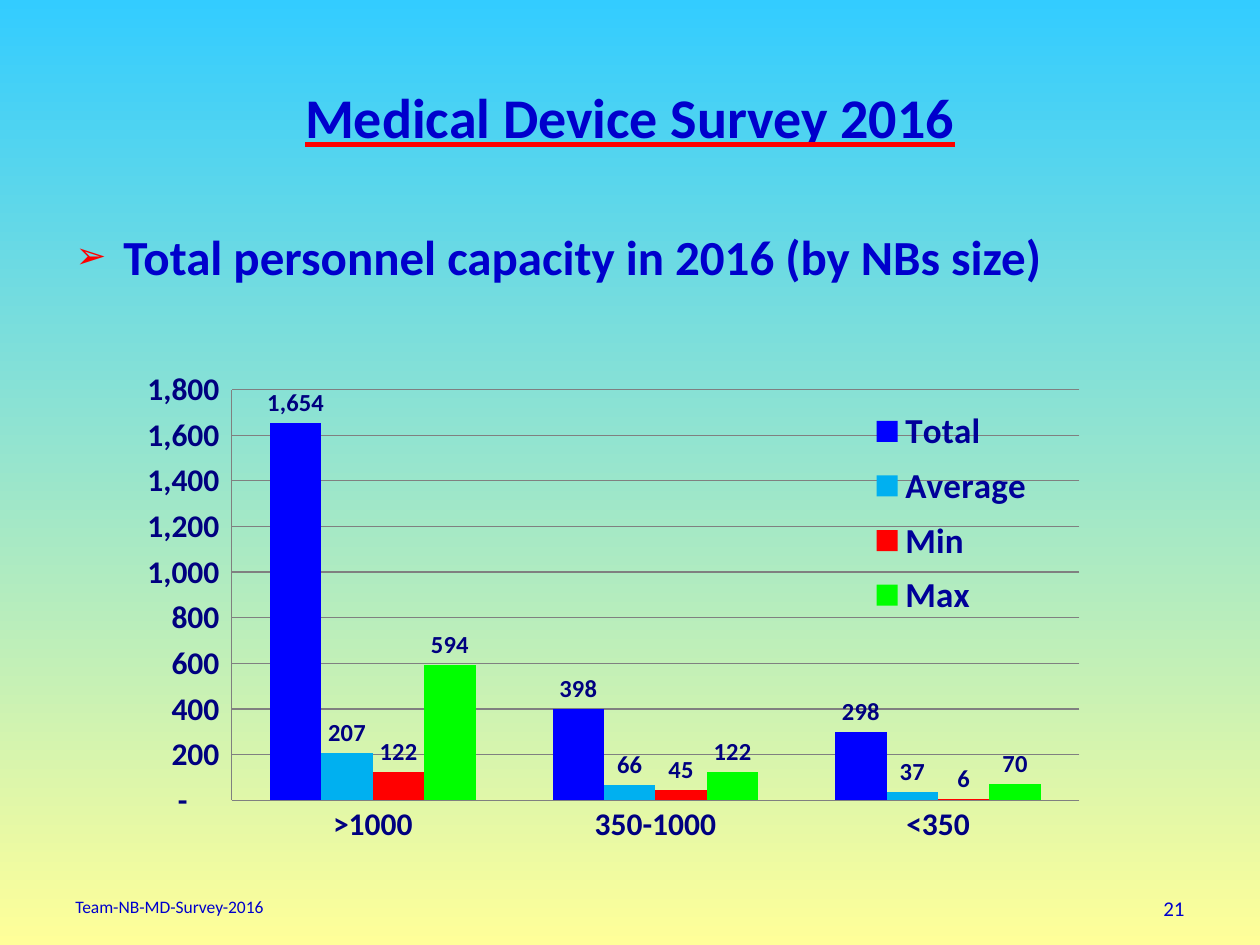
from dataclasses import dataclass

from lxml import etree
from pptx import Presentation
from pptx.chart.data import CategoryChartData
from pptx.dml.color import RGBColor
from pptx.enum.chart import XL_CHART_TYPE as ChartType
from pptx.enum.chart import XL_LABEL_POSITION as LabelPosition
from pptx.enum.chart import XL_LEGEND_POSITION as LegendPosition
from pptx.enum.chart import XL_TICK_MARK as TickMark
from pptx.enum.text import MSO_ANCHOR as Anchor
from pptx.enum.text import PP_ALIGN as Align
from pptx.oxml import parse_xml
from pptx.oxml.ns import nsdecls, qn
from pptx.util import Inches, Pt

SKY = RGBColor(0x33, 0xCC, 0xFF)
CREAM = RGBColor(0xFF, 0xFF, 0x99)
BLUE = RGBColor(0x00, 0x00, 0xCC)
NAVY = RGBColor(0x00, 0x00, 0x80)
LEGEND_BLUE = RGBColor(0x00, 0x00, 0x99)
RED = RGBColor(0xFF, 0x00, 0x00)
GRAY = RGBColor(0x80, 0x80, 0x80)
FONT = "Calibri"
ACCOUNTING = '_ * #,##0_ ;_ * \\-#,##0_ ;_ * "-"??_ ;_ '


@dataclass
class Measure:
    name: str
    values: tuple[int, ...]
    color: RGBColor
    label_format: str


@dataclass
class FooterText:
    text: str
    left: float
    width: float
    size: int
    align: Align


CATEGORIES = (">1000", "350-1000", "<350")
MEASURES = (
    Measure("Total", (1654, 398, 298), RGBColor(0x00, 0x00, 0xFF), ACCOUNTING),
    Measure("Average", (207, 66, 37), RGBColor(0x00, 0xB0, 0xF0), ACCOUNTING),
    Measure("Min", (122, 45, 6), RED, "General"),
    Measure("Max", (594, 122, 70), RGBColor(0x00, 0xFF, 0x00), "General"),
)
FOOTERS = (
    FooterText("21", 7.17, 2.33, 12, Align.RIGHT),
    FooterText("Team-NB-MD-Survey-2016", 0.5, 3.17, 10, Align.LEFT),
)


def style_font(font, size: int, color: RGBColor, **extra) -> None:
    formats = {"size": Pt(size), "name": FONT, "bold": False} | extra
    for name, value in formats.items():
        setattr(font, name, value)
    font.color.rgb = color


def place(shape, left: float, top: float, width: float, height: float) -> None:
    box = {"left": left, "top": top, "width": width, "height": height}
    for name, value in box.items():
        setattr(shape, name, Inches(value))


def underline_in(span, color: RGBColor) -> None:
    fill = parse_xml(f'<a:uFill {nsdecls("a")}><a:solidFill>'
                     f'<a:srgbClr val="{color}"/></a:solidFill></a:uFill>')
    span.font._element.find(qn("a:solidFill")).addnext(fill)


def add_bullet(para, mark: str, color: RGBColor) -> None:
    props = para._p.get_or_add_pPr()
    props.set("marL", str(Inches(0.38)))
    props.set("indent", str(Inches(-0.38)))
    clr = etree.SubElement(props, qn("a:buClr"))
    etree.SubElement(clr, qn("a:srgbClr")).set("val", str(color))
    etree.SubElement(props, qn("a:buSzPct")).set("val", "75000")
    etree.SubElement(props, qn("a:buChar")).set("char", mark)


def set_layout(parent, x: float, y: float, w: float, h: float, inner: bool = False) -> None:
    for old in parent.findall(qn("c:layout")):
        parent.remove(old)
    target = '<c:layoutTarget val="inner"/>' if inner else ""
    sizes = "".join(f'<c:{key} val="{value}"/>'
                    for key, value in {"x": x, "y": y, "w": w, "h": h}.items())
    layout = parse_xml(
        f'<c:layout {nsdecls("c")}><c:manualLayout>{target}<c:xMode val="edge"/>'
        f'<c:yMode val="edge"/>{sizes}</c:manualLayout></c:layout>')
    before = parent.find(qn("c:legendPos"))
    if before is None:
        parent.insert(0, layout)
    else:
        before.addnext(layout)


def add_footer(page, footer: FooterText) -> None:
    box = page.shapes.add_textbox(
        Inches(footer.left), Inches(7.06), Inches(footer.width), Inches(0.29))
    box.text_frame.word_wrap = True
    para = box.text_frame.paragraphs[0]
    para.alignment = footer.align
    span = para.add_run()
    span.text = footer.text
    style_font(span.font, footer.size, BLUE)


def add_capacity_chart(page) -> None:
    data = CategoryChartData()
    data.categories = CATEGORIES
    for measure in MEASURES:
        data.add_series(measure.name, measure.values, measure.label_format)
    chart = page.shapes.add_chart(
        ChartType.COLUMN_CLUSTERED, Inches(0.98), Inches(2.17),
        Inches(7.87), Inches(4.73), data).chart
    chart.has_title = False
    chart.font.size, chart.font.name = Pt(10), "Arial"
    set_layout(chart._chartSpace.chart.plotArea, 0.109, 0.195, 0.855, 0.689, inner=True)

    # Axes
    for axis in (chart.category_axis, chart.value_axis):
        axis.major_tick_mark = axis.minor_tick_mark = TickMark.NONE
        style_font(axis.tick_labels.font, 18, NAVY, bold=True)
        axis.format.line.color.rgb = GRAY
    values = chart.value_axis
    values.minimum_scale, values.maximum_scale, values.major_unit = 0, 1800, 200
    values.has_major_gridlines = True
    values.major_gridlines.format.line.color.rgb = GRAY
    values.tick_labels.number_format = ACCOUNTING
    values.tick_labels.number_format_is_linked = False

    # Columns and their labels
    plot = chart.plots[0]
    plot.gap_width, plot.overlap, plot.vary_by_categories = 150, 0, False
    for series, measure in zip(plot.series, MEASURES):
        series.format.fill.solid()
        series.format.fill.fore_color.rgb = measure.color
        labels = series.data_labels
        labels.show_value = True
        labels.position = LabelPosition.OUTSIDE_END
        labels.number_format = measure.label_format
        labels.number_format_is_linked = False
        style_font(labels.font, 14, NAVY, bold=True)

    # Legend over the plot
    chart.has_legend = True
    chart.legend.position = LegendPosition.RIGHT
    chart.legend.include_in_layout = False
    style_font(chart.legend.font, 20, LEGEND_BLUE, bold=True)
    set_layout(chart.legend._element, 0.74, 0.21, 0.19, 0.385)


def main() -> None:
    deck = Presentation()
    deck.slide_width, deck.slide_height = Inches(10), Inches(7.5)
    page = deck.slides.add_slide(deck.slide_layouts[1])

    # Background, sky at the top
    fill = page.background.fill
    fill.gradient()
    fill.gradient_angle = 270
    for stop, color, position in zip(fill.gradient_stops, (SKY, CREAM), (0, 1)):
        stop.color.rgb = color
        stop.position = position

    # Title
    title = page.shapes.title
    place(title, 0.5, 0.3, 9, 1.25)
    title.text_frame.vertical_anchor = Anchor.MIDDLE
    para = title.text_frame.paragraphs[0]
    para.alignment = Align.CENTER
    span = para.add_run()
    span.text = "Medical Device Survey 2016"
    style_font(span.font, 32, BLUE, bold=True, underline=True)
    underline_in(span, RED)

    # Heading of the chart
    body = page.placeholders[1]
    place(body, 0.5, 1.75, 9, 0.82)
    para = body.text_frame.paragraphs[0]
    para.space_before = Pt(0)
    add_bullet(para, "➢", RED)
    span = para.add_run()
    span.text = "Total personnel capacity in 2016 (by NBs size)"
    style_font(span.font, 28, BLUE, bold=True)

    for footer in FOOTERS:
        add_footer(page, footer)
    add_capacity_chart(page)
    deck.save("out.pptx")


if __name__ == "__main__":
    main()
